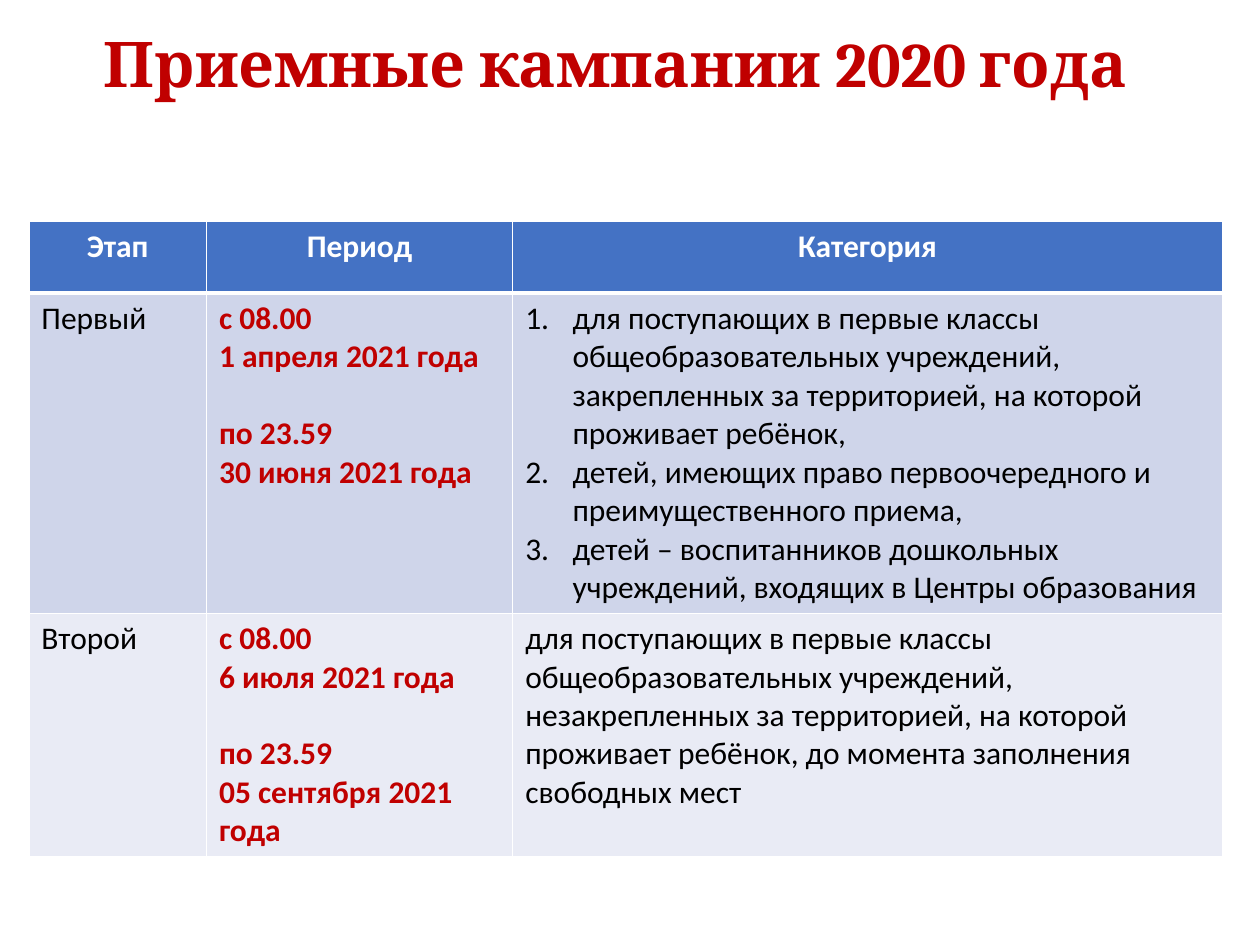
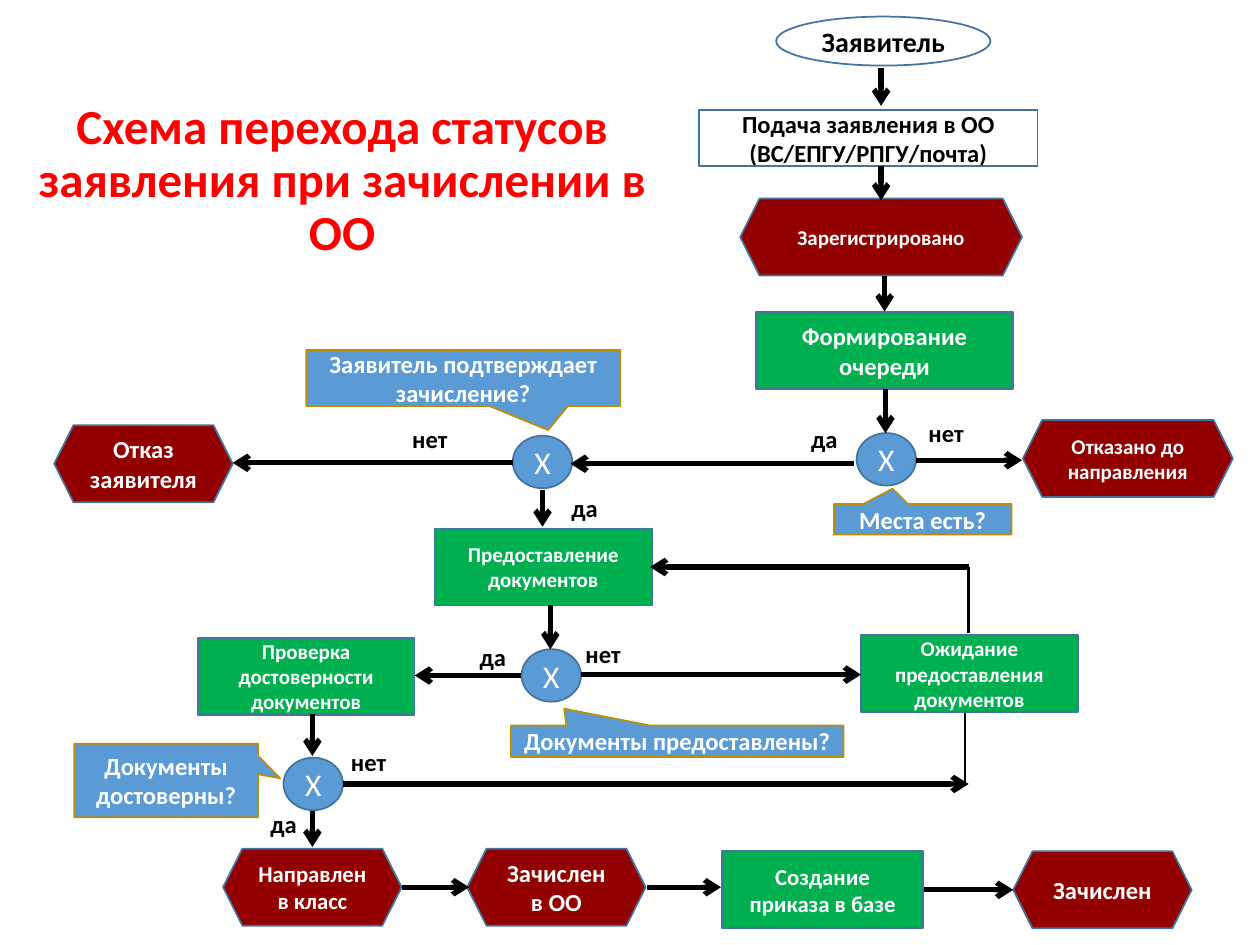
from lxml.etree import SubElement
from pptx import Presentation
from pptx.dml.color import RGBColor
from pptx.enum.shapes import MSO_CONNECTOR, MSO_SHAPE
from pptx.enum.text import MSO_ANCHOR, MSO_AUTO_SIZE, PP_ALIGN
from pptx.oxml.ns import qn
from pptx.util import Pt

WHITE, BLACK = "FFFFFF", "000000"
CRIMSON, RED, MAROON = "C00000", "FF0000", "920000"
GREEN, BLUE, OUTLINE, GOLD = "00B050", "5B9BD5", "43739E", "BD8E00"
HEADER_BLUE, BAND_DARK, BAND_LIGHT = "4472C4", "CFD5EA", "E9EBF5"


def color(value):
    """Turn a hex string into a colour."""
    return RGBColor.from_string(value)


def paint(fill, value):
    """Give a fill one solid colour."""
    fill.solid()
    fill.fore_color.rgb = color(value)


def write(frame, text, size=14, ink=BLACK, bold=True, font="Calibri",
          align=PP_ALIGN.LEFT, spacing=None, gap_before=None, numbered=False):
    """Write one paragraph per line; gap_before is the index of a spaced one."""
    for index, line in enumerate(text.split("\n")):
        paragraph = frame.add_paragraph() if index else frame.paragraphs[0]
        paragraph.alignment = align
        if spacing:
            paragraph.line_spacing = spacing
        if gap_before == index:
            paragraph.space_before = Pt(size * 1.22)
        if numbered:
            properties = paragraph._p.get_or_add_pPr()
            properties.set("marL", str(Pt(27)))
            properties.set("indent", str(-Pt(27)))
            SubElement(properties, qn("a:buFont"), typeface="+mj-lt")
            SubElement(properties, qn("a:buAutoNum"), type="arabicPeriod")
        run = paragraph.add_run()
        run.text = line
        run.font.name, run.font.size, run.font.bold = font, Pt(size), bold
        run.font.color.rgb = color(ink)


class Deck:
    """Holds the shared style and the current slide."""

    def __init__(self):
        """Start an empty presentation."""
        self.presentation = Presentation()
        self.presentation.slide_width = Pt(720)
        self.presentation.slide_height = Pt(540)
        self.slide = None

    def add_slide(self, title, box, **style):
        """Add a slide and place its title."""
        layout = self.presentation.slide_layouts[5]
        self.slide = self.presentation.slides.add_slide(layout)
        shape = self.slide.shapes.title
        shape.left, shape.top, shape.width, shape.height = map(Pt, box)
        frame = shape.text_frame
        frame.auto_size = MSO_AUTO_SIZE.NONE
        frame.word_wrap = True
        frame.vertical_anchor = MSO_ANCHOR.MIDDLE
        write(frame, title, spacing=0.9, **style)

    def block(self, kind, text, left, top, width, height, size=14, fill=GREEN,
              line=OUTLINE, ink=WHITE, bold=True, adjustments=()):
        """Add a preset shape with centred text."""
        shape = self.slide.shapes.add_shape(
            kind, Pt(left), Pt(top), Pt(width), Pt(height))
        shape.shadow.inherit = False
        for index, value in enumerate(adjustments):
            shape.adjustments[index] = value
        paint(shape.fill, fill)
        shape.line.color.rgb = color(line)
        shape.line.width = Pt(1)
        frame = shape.text_frame
        frame.word_wrap = True
        frame.vertical_anchor = MSO_ANCHOR.MIDDLE
        write(frame, text, size=size, ink=ink, bold=bold, align=PP_ALIGN.CENTER)
        return shape

    def decision(self, left, top):
        """Add a round decision node."""
        frame = self.block(MSO_SHAPE.OVAL, "Х", left, top, 34, 30, size=18,
                           fill=BLUE, bold=False).text_frame
        frame.margin_left = frame.margin_right = 0

    def label(self, text, left, top):
        """Add a branch label."""
        box = self.slide.shapes.add_textbox(Pt(left), Pt(top), Pt(42), Pt(24))
        box.text_frame.word_wrap = True
        write(box.text_frame, text)

    def line(self, start_x, start_y, end_x, end_y, arrow=True):
        """Add a thick arrow or a thin plain line."""
        connector = self.slide.shapes.add_connector(
            MSO_CONNECTOR.STRAIGHT, Pt(start_x), Pt(start_y), Pt(end_x), Pt(end_y))
        connector.line.color.rgb = color(BLACK)
        connector.line.width = Pt(3 if arrow else 1.5)
        if arrow:
            SubElement(connector.line._get_or_add_ln(), qn("a:tailEnd"), type="arrow")
        SubElement(connector._element.spPr, qn("a:effectLst"))

    def table(self, left, top, widths, heights):
        """Add an empty table with the given columns and rows."""
        table = self.slide.shapes.add_table(
            len(heights), len(widths), Pt(left), Pt(top),
            Pt(sum(widths)), Pt(sum(heights))).table
        for column, width in zip(table.columns, widths):
            column.width = Pt(width)
        for row, height in zip(table.rows, heights):
            row.height = Pt(height)
        return table

    def cell(self, cell, text, fill, bottom=1, **style):
        """Fill a table cell and draw its white borders."""
        write(cell.text_frame, text, size=18, **style)
        properties = cell._tc.get_or_add_tcPr()
        for side, width in (("L", 1), ("R", 1), ("T", 1), ("B", bottom)):
            border = SubElement(properties, qn(f"a:ln{side}"), w=str(Pt(width)))
            solid = SubElement(border, qn("a:solidFill"))
            SubElement(solid, qn("a:srgbClr"), val=WHITE)
        paint(cell.fill, fill)


def build_campaign(deck):
    """Build the table of admission stages."""
    deck.add_slide("Приемные кампании 2020 года", (52, 0, 617, 77),
                   size=36, ink=CRIMSON, font="Cambria")
    table = deck.table(16.5, 126.5, (101.5, 175, 405.5), (41, 182, 139))
    for index, heading in enumerate(("Этап", "Период", "Категория")):
        deck.cell(table.cell(0, index), heading, HEADER_BLUE, bottom=3,
                  ink=WHITE, align=PP_ALIGN.CENTER)
    stages = (
        ("Первый", "с 08.00\n1 апреля 2021 года\nпо 23.59\n30 июня 2021 года",
         "для поступающих в первые классы общеобразовательных учреждений, "
         "закрепленных за территорией, на которой проживает ребёнок,\n"
         "детей, имеющих право первоочередного и преимущественного приема,\n"
         "детей – воспитанников дошкольных учреждений, входящих в Центры образования",
         BAND_DARK),
        ("Второй", "с 08.00\n6 июля 2021 года\nпо 23.59\n05 сентября 2021 года",
         "для поступающих в первые классы общеобразовательных учреждений, "
         "незакрепленных за территорией, на которой проживает ребёнок, "
         "до момента заполнения свободных мест", BAND_LIGHT),
    )
    for row, (stage, period, category, band) in enumerate(stages, start=1):
        deck.cell(table.cell(row, 0), stage, band, bold=False)
        deck.cell(table.cell(row, 1), period, band, ink=CRIMSON, gap_before=2)
        deck.cell(table.cell(row, 2), category, band, bold=False,
                  numbered="\n" in category)


def build_status_flow(deck):
    """Build the flowchart of application statuses."""
    deck.add_slide("Схема перехода статусов заявления при зачислении в ОО",
                   (12, 50, 367, 108), size=28, ink=RED, align=PP_ALIGN.CENTER)

    deck.block(MSO_SHAPE.OVAL, "Заявитель", 443.5, 9.5, 122.5, 28,
               size=16, fill=WHITE, ink=BLACK)
    deck.block(MSO_SHAPE.RECTANGLE, "Подача заявления в ОО (ВС/ЕПГУ/РПГУ/почта)",
               399.5, 63, 193.5, 32, fill=WHITE, ink=BLACK)

    for text, left, top, width, size in (
            ("Зарегистрировано", 423, 113.5, 161, 12),
            ("Отказано до направления", 584.5, 240, 120, 12),
            ("Отказ заявителя", 31, 243, 102, 14),
            ("Направлен в класс", 127.5, 485, 102, 13),
            ("Зачислен в ОО", 267, 485, 102, 14),
            ("Зачислен", 579, 486.5, 102, 14)):
        deck.block(MSO_SHAPE.HEXAGON, text, left, top, width, 44, size, MAROON)

    for text, left, top, width, size in (
            ("Формирование очереди", 432, 178.5, 147, 14),
            ("Предоставление документов", 248.5, 302, 124, 12),
            ("Ожидание предоставления документов", 492, 363, 124, 12),
            ("Проверка достоверности документов", 113, 364.5, 124, 12),
            ("Создание приказа в базе", 412.5, 486.5, 115, 13)):
        deck.block(MSO_SHAPE.RECTANGLE, text, left, top, width, 44, size)

    for text, left, top, width, height, pointer in (
            ("Места есть?", 476.5, 288, 101.5, 17.5, (-0.17, -1)),
            ("Заявитель подтверждает зачисление?", 175, 200, 179.5, 32, (0.27, 0.93)),
            ("Документы предоставлены?", 292, 414.5, 190, 18, (-0.34, -1.03)),
            ("Документы достоверны?", 42.5, 425, 105, 42, (0.62, -0.03))):
        deck.block(MSO_SHAPE.RECTANGULAR_CALLOUT, text, left, top, width, height,
                   fill=BLUE, line=GOLD, adjustments=pointer)

    for left, top in ((489.5, 247.5), (293, 249), (298, 371), (162, 433)):
        deck.decision(left, top)

    for x, top, bottom in (
            (503.5, 39, 60.5), (503.5, 95, 114.5), (505.5, 158, 178),
            (506, 222.5, 247.5), (310, 280, 301), (314.5, 346, 371),
            (178.5, 408, 432), (178.5, 463.5, 484)):
        deck.line(x, top, x, bottom)
    for start, end, y in (
            (523.5, 584, 263), (488, 326, 265), (293, 133, 264.5),
            (332, 492, 385.5), (298, 237, 386), (553.5, 371.5, 324),
            (196, 553.5, 448), (229.5, 268, 507), (369.5, 412, 507),
            (528, 579, 508.5)):
        deck.line(start, y, end, y)
    deck.line(553.5, 324, 553.5, 361.5, arrow=False)
    deck.line(551.5, 407.5, 551.5, 448, arrow=False)

    for text, left, top in (
            ("нет", 523.5, 235.5), ("да", 456.5, 238.5), ("да", 319.5, 278),
            ("нет", 228.5, 238.5), ("да", 267, 363.5), ("нет", 327.5, 361.5),
            ("да", 147.5, 458.5), ("нет", 193.5, 423.5)):
        deck.label(text, left, top)


def main():
    """Build and save the presentation."""
    deck = Deck()
    build_campaign(deck)
    build_status_flow(deck)
    deck.presentation.save("out.pptx")


if __name__ == "__main__":
    main()
